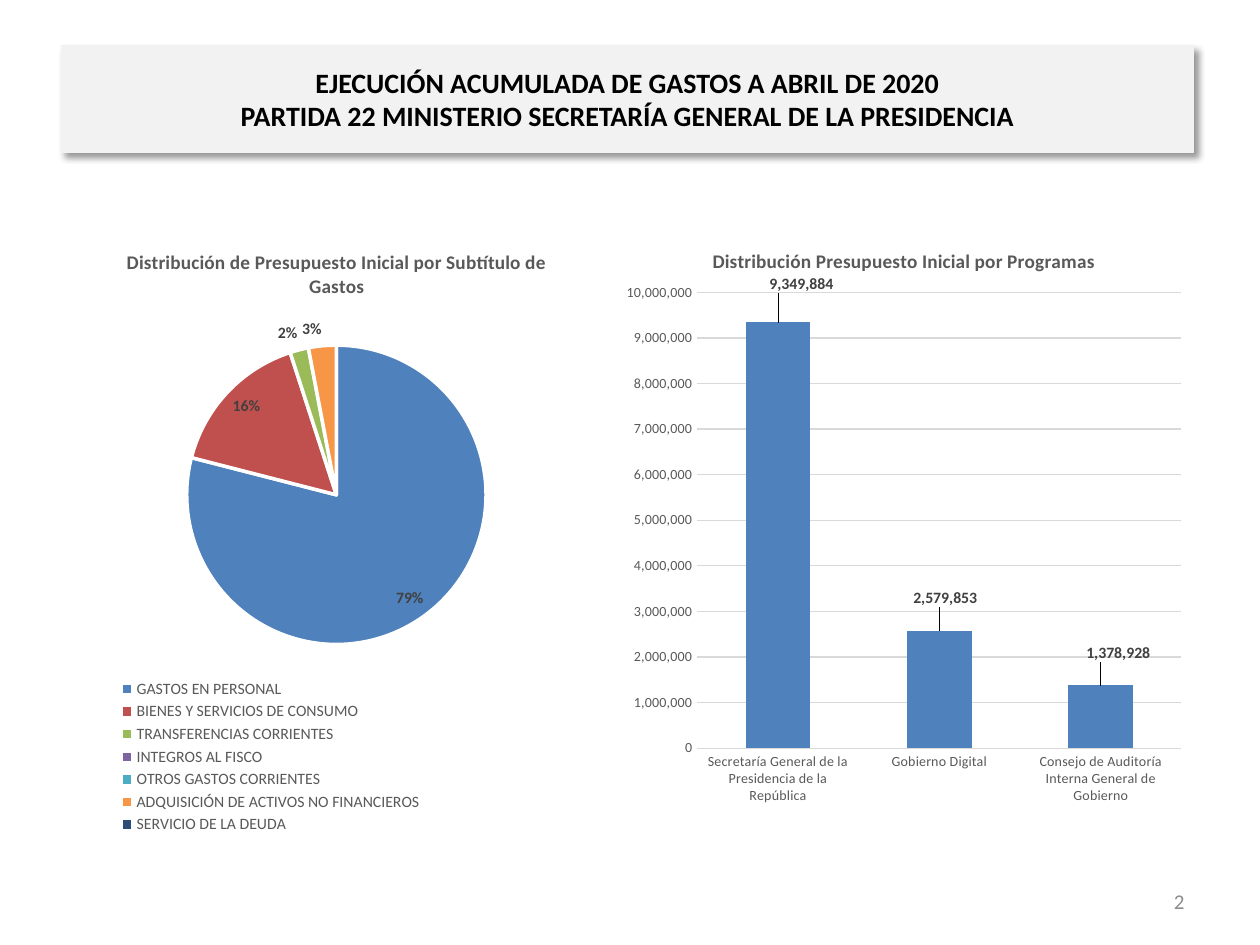
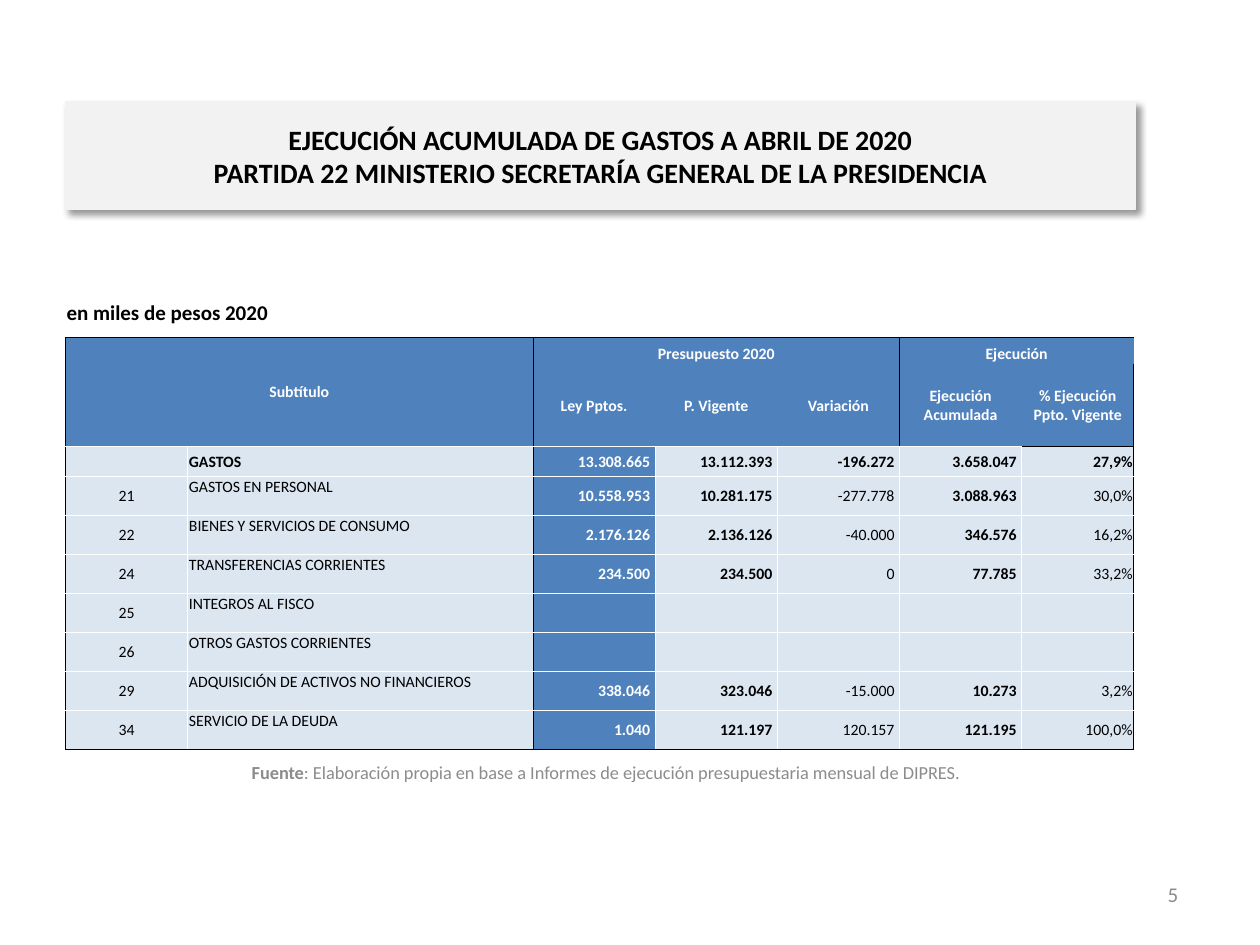
from lxml.etree import SubElement
from pptx import Presentation
from pptx.chart.data import CategoryChartData
from pptx.dml.color import RGBColor
from pptx.enum.chart import XL_CHART_TYPE, XL_LABEL_POSITION, XL_LEGEND_POSITION, XL_TICK_MARK
from pptx.enum.shapes import MSO_SHAPE
from pptx.enum.text import MSO_ANCHOR, PP_ALIGN
from pptx.oxml import parse_xml
from pptx.oxml.ns import nsdecls, qn
from pptx.util import Inches, Pt

BLACK = RGBColor(0x00, 0x00, 0x00)
WHITE = RGBColor(0xFF, 0xFF, 0xFF)
BAND = RGBColor(0xF2, 0xF2, 0xF2)
FOOTER_GRAY = RGBColor(0x8C, 0x8C, 0x8C)
CHART_GRAY = RGBColor(0x59, 0x59, 0x59)
LABEL_GRAY = RGBColor(0x40, 0x40, 0x40)
GRID_GRAY = RGBColor(0xD9, 0xD9, 0xD9)
BLUE = RGBColor(0x4F, 0x81, 0xBD)
PALE_BLUE = RGBColor(0xDC, 0xE6, 0xF1)
SLICE_COLORS = [
    BLUE,
    RGBColor(0xC0, 0x50, 0x4D),
    RGBColor(0x9B, 0xBB, 0x59),
    RGBColor(0x80, 0x64, 0xA2),
    RGBColor(0x4B, 0xAC, 0xC6),
    RGBColor(0xF7, 0x96, 0x46),
    RGBColor(0x2C, 0x4D, 0x75),
]
FONT = "Calibri"
NO_TABLE_STYLE = "{2D5ABB26-0587-4C30-8999-92F81FD0307C}"
TITLE = (
    "EJECUCIÓN ACUMULADA DE GASTOS A ABRIL DE 2020\n"
    "PARTIDA 22 MINISTERIO SECRETARÍA GENERAL DE LA PRESIDENCIA"
)

SUBTITLES = [
    ("21", "GASTOS EN PERSONAL", 79,
     ["10.558.953", "10.281.175", "-277.778", "3.088.963", "30,0%"]),
    ("22", "BIENES Y SERVICIOS DE CONSUMO", 16,
     ["2.176.126", "2.136.126", "-40.000", "346.576", "16,2%"]),
    ("24", "TRANSFERENCIAS CORRIENTES", 2,
     ["234.500", "234.500", "0", "77.785", "33,2%"]),
    ("25", "INTEGROS AL FISCO", None, [""] * 5),
    ("26", "OTROS GASTOS CORRIENTES", None, [""] * 5),
    ("29", "ADQUISICIÓN DE ACTIVOS NO FINANCIEROS", 3,
     ["338.046", "323.046", "-15.000", "10.273", "3,2%"]),
    ("34", "SERVICIO DE LA DEUDA", 0,
     ["1.040", "121.197", "120.157", "121.195", "100,0%"]),
]
TOTALS = ["13.308.665", "13.112.393", "-196.272", "3.658.047", "27,9%"]
PROGRAMS = {
    "Secretaría General de la Presidencia de la República": 9349884,
    "Gobierno Digital": 2579853,
    "Consejo de Auditoría Interna General de Gobierno": 1378928,
}
COLUMN_WIDTHS = [0.97, 2.74, 0.97, 0.97, 0.97, 0.97, 0.89]
ROW_HEIGHTS = [0.21, 0.65, 0.24] + [0.31] * len(SUBTITLES)


def format_font(font, size, color, bold=False):
    font.name = FONT
    font.size = Pt(size)
    font.bold = bold
    font.color.rgb = color


def write_text(text_frame, text, size=9, color=BLACK, bold=False, align=PP_ALIGN.LEFT):
    paragraph = text_frame.paragraphs[0]
    paragraph.alignment = align
    if not text:
        paragraph._p.get_or_add_endParaRPr().set("sz", str(size * 100))
        return
    for index, line in enumerate(text.split("\n")):
        if index:
            paragraph.add_line_break()
        run = paragraph.add_run()
        run.text = line
        format_font(run.font, size, color, bold)


def chart_layout(x, y, width=None, height=None, inner=False):
    layout = parse_xml(f"<c:layout {nsdecls('c')}><c:manualLayout/></c:layout>")
    settings = [("layoutTarget", "inner")] if inner else []
    if width:
        settings += [("xMode", "edge"), ("yMode", "edge")]
    settings += [("x", x), ("y", y)]
    if width:
        settings += [("w", width), ("h", height)]
    for name, value in settings:
        SubElement(layout[0], qn(f"c:{name}")).set("val", str(value))
    return layout


def replace_layout(parent, layout, index):
    for old_layout in parent.findall(qn("c:layout")):
        parent.remove(old_layout)
    parent.insert(index, layout)


def label_point(point, position, shift=None, percent=False):
    label = point.data_label
    format_font(label.font, 9, LABEL_GRAY, True)
    label.position = position
    element = label._get_or_add_dLbl()
    element.find(qn("c:showVal")).set("val", str(int(not percent)))
    element.find(qn("c:showPercent")).set("val", str(int(percent)))
    if shift:
        replace_layout(element, chart_layout(*shift), 1)


def vertical_edge(row, boundary):
    if boundary in (0, 2, len(COLUMN_WIDTHS)) or (row < 2 and boundary == 5):
        return BLACK
    return WHITE if row >= 2 else None


def horizontal_edge(boundary, column):
    if boundary in (0, len(ROW_HEIGHTS)) or (boundary, column) == (2, 6):
        return BLACK
    return None if boundary == 1 else WHITE


def draw_borders(cell, row, column):
    edges = {
        "lnL": vertical_edge(row, column),
        "lnR": vertical_edge(row, column + 1),
        "lnT": horizontal_edge(row, column),
        "lnB": horizontal_edge(row + 1, column),
    }
    properties = cell._tc.get_or_add_tcPr()
    for index, (tag, color) in enumerate(edges.items()):
        fill = f'<a:solidFill><a:srgbClr val="{color}"/></a:solidFill>' if color else "<a:noFill/>"
        properties.insert(index, parse_xml(f'<a:{tag} {nsdecls("a")} w="6350">{fill}</a:{tag}>'))


class BudgetDeck:
    def __init__(self):
        self.presentation = Presentation()
        self.presentation.slide_width = Inches(10)
        self.presentation.slide_height = Inches(7.5)
        self.slide = None

    def add_slide(self):
        self.slide = self.presentation.slides.add_slide(self.presentation.slide_layouts[6])

    def add_title_band(self, left, top, width):
        band = self.slide.shapes.add_shape(
            MSO_SHAPE.RECTANGLE, Inches(left), Inches(top), Inches(width), Inches(0.85))
        band.fill.solid()
        band.fill.fore_color.rgb = BAND
        band.line.color.rgb = BAND
        band.line.width = Pt(0.75)
        band._element.spPr.append(parse_xml(
            f'<a:effectLst {nsdecls("a")}><a:outerShdw blurRad="{Pt(4)}" dist="{Pt(3)}" '
            'dir="2700000" algn="tl" rotWithShape="0"><a:srgbClr val="000000">'
            '<a:alpha val="40000"/></a:srgbClr></a:outerShdw></a:effectLst>'))
        band.text_frame.word_wrap = True
        band.text_frame.vertical_anchor = MSO_ANCHOR.MIDDLE
        write_text(band.text_frame, TITLE, size=16, bold=True, align=PP_ALIGN.CENTER)

    def add_text(self, left, top, width, height, *parts, anchor=MSO_ANCHOR.MIDDLE, **text_format):
        box = self.slide.shapes.add_textbox(
            Inches(left), Inches(top), Inches(width), Inches(height))
        box.text_frame.word_wrap = True
        box.text_frame.vertical_anchor = anchor
        for text, bold in parts:
            write_text(box.text_frame, text, bold=bold, **text_format)

    def add_page_number(self, left, top, number):
        self.add_text(left, top, 2.33, 0.4, (number, False),
                      size=12, color=FOOTER_GRAY, align=PP_ALIGN.RIGHT)

    def add_chart(self, kind, left, top, width, height, categories, values,
                  title, title_place, plot_place):
        data = CategoryChartData(number_format="#,##0")
        data.categories = categories
        data.add_series("Series 1", values)
        chart = self.slide.shapes.add_chart(
            kind, Inches(left), Inches(top), Inches(width), Inches(height), data).chart
        format_font(chart.font, 10, BLACK)
        chart.has_title = True
        write_text(chart.chart_title.text_frame, title, size=11, color=CHART_GRAY,
                   bold=True, align=PP_ALIGN.CENTER)
        title_layout = chart_layout(*title_place)
        for index, name in enumerate(("xMode", "yMode")):
            mode = SubElement(title_layout[0], qn(f"c:{name}"))
            mode.set("val", "edge")
            title_layout[0].insert(index, mode)
        replace_layout(chart.chart_title._element, title_layout, 1)
        chart.chart_title.include_in_layout = False
        replace_layout(chart._chartSpace.chart.plotArea, chart_layout(*plot_place, inner=True), 0)
        chart.has_legend = False
        return chart

    def add_subtitle_pie(self):
        chart = self.add_chart(
            XL_CHART_TYPE.PIE, 0.5, 1.75, 4.34, 4.95,
            [name for _, name, _, _ in SUBTITLES], [share for _, _, share, _ in SUBTITLES],
            "Distribución de Presupuesto Inicial por Subtítulo de Gastos",
            (0.11, 0.04), (0.22, 0.2, 0.56, 0.48))
        chart.has_legend = True
        chart.legend.position = XL_LEGEND_POSITION.BOTTOM
        chart.legend.include_in_layout = False
        format_font(chart.legend.font, 9, CHART_GRAY)
        replace_layout(chart.legend._element, chart_layout(0.08, 0.73, 0.6, 0.26), 1)
        plot = chart.plots[0]
        plot.vary_by_categories = True
        shifts = {6: (0.02, 0.0)}
        for index, color in enumerate(SLICE_COLORS):
            point = plot.series[0].points[index]
            point.format.fill.solid()
            point.format.fill.fore_color.rgb = color
            point.format.line.color.rgb = WHITE
            point.format.line.width = Pt(2)
            share = SUBTITLES[index][2]
            if share is not None:
                position = XL_LABEL_POSITION.INSIDE_END if share > 10 else XL_LABEL_POSITION.OUTSIDE_END
                label_point(point, position, shifts.get(index), percent=True)

    def add_program_columns(self):
        chart = self.add_chart(
            XL_CHART_TYPE.COLUMN_CLUSTERED, 4.84, 1.75, 4.63, 4.76,
            list(PROGRAMS), list(PROGRAMS.values()),
            "Distribución Presupuesto Inicial por Programas",
            (0.17, 0.04), (0.15, 0.12, 0.83, 0.76))
        plot = chart.plots[0]
        plot.gap_width = 150
        plot.vary_by_categories = False
        series = plot.series[0]
        series.format.fill.solid()
        series.format.fill.fore_color.rgb = BLUE
        for index, shift in enumerate([(0.04, -0.04), (0.01, -0.03), (0.03, -0.03)]):
            label_point(series.points[index], XL_LABEL_POSITION.OUTSIDE_END, shift)
        for axis in (chart.category_axis, chart.value_axis):
            axis.major_tick_mark = XL_TICK_MARK.NONE
            axis.minor_tick_mark = XL_TICK_MARK.NONE
            axis.format.line.fill.background()
            format_font(axis.tick_labels.font, 8, CHART_GRAY)
        axis = chart.value_axis
        axis.minimum_scale, axis.maximum_scale, axis.major_unit = 0, 10000000, 1000000
        axis.tick_labels.number_format = "#,##0"
        axis.tick_labels.number_format_is_linked = False
        axis.major_gridlines.format.line.color.rgb = GRID_GRAY
        axis.major_gridlines.format.line.width = Pt(0.75)

    def add_execution_table(self):
        rows = [
            ["Subtítulo", "", "Presupuesto 2020", "", "", "Ejecución", ""],
            ["", "", "Ley Pptos.", "P. Vigente", "Variación",
             "Ejecución Acumulada", "% Ejecución Ppto. Vigente"],
            ["", "GASTOS"] + TOTALS,
        ] + [[code, name] + amounts for code, name, _, amounts in SUBTITLES]
        table = self.slide.shapes.add_table(
            len(rows), len(COLUMN_WIDTHS), Inches(0.52), Inches(2.68),
            Inches(sum(COLUMN_WIDTHS)), Inches(sum(ROW_HEIGHTS))).table
        table._tbl.tblPr.find(qn("a:tableStyleId")).text = NO_TABLE_STYLE
        for column, width in zip(table.columns, COLUMN_WIDTHS):
            column.width = Inches(width)
        for row, height in zip(table.rows, ROW_HEIGHTS):
            row.height = Inches(height)
        for first, last in [((0, 0), (1, 1)), ((0, 2), (0, 4)), ((0, 5), (0, 6))]:
            table.cell(*first).merge(table.cell(*last))
        for row, texts in enumerate(rows):
            for column, text in enumerate(texts):
                self.fill_cell(table.cell(row, column), row, column, text)

    def fill_cell(self, cell, row, column, text):
        header = row < 2
        dark = header or column == 2
        align = PP_ALIGN.CENTER if header or column == 0 else PP_ALIGN.RIGHT
        if column == 1 and not header:
            align = PP_ALIGN.LEFT
        cell.margin_left = cell.margin_top = cell.margin_right = Inches(0.01)
        cell.margin_bottom = 0
        if not header and 2 <= column <= 5:
            cell.margin_right = Inches(0.04)
        cell.vertical_anchor = MSO_ANCHOR.MIDDLE
        if row == 0 and column >= 2:
            cell.vertical_anchor = MSO_ANCHOR.BOTTOM
        elif row > 2 and column == 1:
            cell.vertical_anchor = MSO_ANCHOR.TOP
        cell.fill.solid()
        cell.fill.fore_color.rgb = BLUE if dark else PALE_BLUE
        write_text(cell.text_frame, text, color=WHITE if dark else BLACK,
                   bold=row <= 2 or column in (2, 3, 5), align=align)
        draw_borders(cell, row, column)


def main():
    deck = BudgetDeck()

    deck.add_slide()
    deck.add_page_number(7.17, 6.95, "2")
    deck.add_title_band(0.49, 0.36, 8.98)
    deck.add_subtitle_pie()
    deck.add_program_columns()

    deck.add_slide()
    deck.add_title_band(0.52, 0.81, 8.49)
    deck.add_text(0.52, 5.93, 8.58, 0.4, ("Fuente", True),
                  (": Elaboración propia en base a Informes de ejecución presupuestaria "
                   "mensual de DIPRES.", False),
                  size=10.5, color=FOOTER_GRAY, align=PP_ALIGN.CENTER)
    deck.add_page_number(7.12, 6.9, "5")
    deck.add_text(0.43, 2.33, 8.58, 0.35, ("en miles de pesos 2020", True),
                  anchor=MSO_ANCHOR.TOP, size=12)
    deck.add_execution_table()

    deck.presentation.save("out.pptx")


if __name__ == "__main__":
    main()
